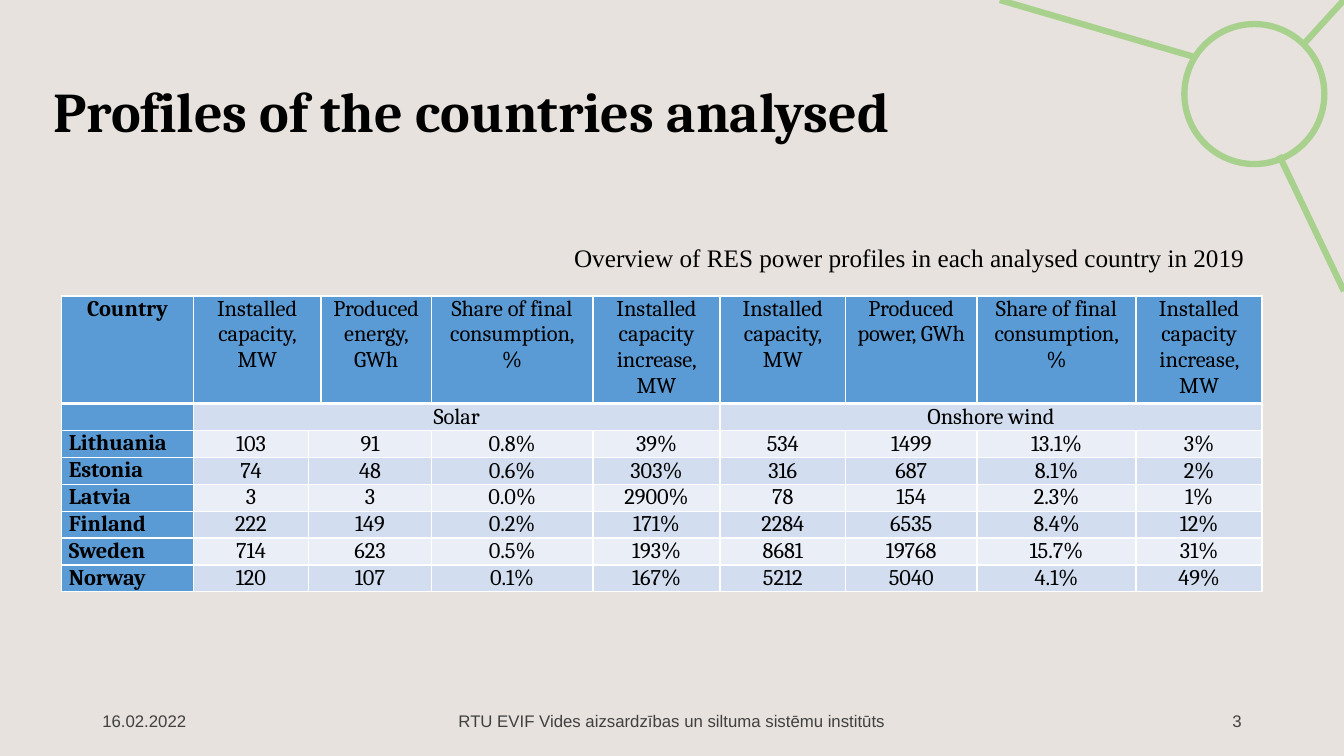
"""Slide with a table of solar and onshore wind power in six countries."""
from lxml.etree import SubElement
from pptx import Presentation
from pptx.dml.color import RGBColor
from pptx.enum.shapes import MSO_CONNECTOR as Link, MSO_SHAPE as Form
from pptx.enum.text import MSO_ANCHOR as Anchor, PP_ALIGN as Align
from pptx.oxml.ns import qn
from pptx.util import Pt

SAND = RGBColor(0xE7, 0xE2, 0xDD)
GREEN = RGBColor(0xA9, 0xD1, 0x8E)
BLACK = RGBColor(0, 0, 0)
GREY = RGBColor(0x40, 0x40, 0x40)
WHITE = RGBColor(0xFF, 0xFF, 0xFF)
BLUE = RGBColor(0x5B, 0x9B, 0xD5)
PALE = RGBColor(0xD2, 0xDE, 0xEF)
LIGHT = RGBColor(0xEA, 0xEF, 0xF7)

deck = Presentation()
deck.slide_width, deck.slide_height = Pt(960), Pt(540)
slide = deck.slides.add_slide(deck.slide_layouts[6])
slide.background.fill.solid()
slide.background.fill.fore_color.rgb = SAND


def add_text(text, box, size, face, color, align=Align.LEFT, anchor=Anchor.MIDDLE):
    frame = slide.shapes.add_textbox(*map(Pt, box)).text_frame
    frame.word_wrap = True
    frame.vertical_anchor = anchor
    para = frame.paragraphs[0]
    para.text = text
    para.alignment = align
    para.font.size, para.font.name = Pt(size), face
    para.font.color.rgb = color
    return para


def add_edge(cell, side, width):
    edge = SubElement(cell._tc.get_or_add_tcPr(), qn("a:ln" + side), w=str(Pt(width)))
    fill = SubElement(edge, qn("a:solidFill"))
    SubElement(fill, qn("a:srgbClr"), val=str(WHITE))


ring = slide.shapes.add_shape(Form.OVAL, Pt(846), Pt(17.2), Pt(100), Pt(100))
ring.shadow.inherit = False
ring.fill.background()
ring.line.color.rgb, ring.line.width = GREEN, Pt(4.5)

for ends in [(960, 208, 913.7, 111), (851.8, 40.3, 714.2, 0), (960, 0, 931, 31.7)]:
    spoke = slide.shapes.add_connector(Link.STRAIGHT, *map(Pt, ends))
    spoke.line.color.rgb, spoke.line.width = GREEN, Pt(4.5)
    SubElement(spoke._element.spPr, qn("a:effectLst"))

title = add_text("Profiles of the countries analysed", (31, 29.5, 744.5, 104.4),
                 40, "Cambria", BLACK)
title.font.bold = True
title.line_spacing = 0.9

CAP = "Installed capacity, MW"
SHARE = "Share of final consumption, %"
RISE = "Installed capacity increase, MW"
rows = [
    ["Country", CAP, "", "Produced energy, GWh", SHARE, RISE,
     CAP, "Produced power, GWh", SHARE, RISE],
    ["", "Solar", "", "", "", "", "Onshore wind", "", "", ""],
    ["Lithuania", "103", "91", "", "0.8%", "39%", "534", "1499", "13.1%", "3%"],
    ["Estonia", "74", "48", "", "0.6%", "303%", "316", "687", "8.1%", "2%"],
    ["Latvia", "3", "3", "", "0.0%", "2900%", "78", "154", "2.3%", "1%"],
    ["Finland", "222", "149", "", "0.2%", "171%", "2284", "6535", "8.4%", "12%"],
    ["Sweden", "714", "623", "", "0.5%", "193%", "8681", "19768", "15.7%", "31%"],
    ["Norway", "120", "107", "", "0.1%", "167%", "5212", "5040", "4.1%", "49%"],
]
widths = [93.8, 82.6, 8.8, 78.7, 115.5, 90.8, 89.7, 93.8, 113.7, 90]
heights = [73.8] + [18.4] * 7

table = slide.shapes.add_table(len(rows), len(widths), Pt(44.2), Pt(211.4),
                               Pt(sum(widths)), Pt(sum(heights))).table
table.first_row = table.horz_banding = False
for col, width in zip(table.columns, widths):
    col.width = Pt(width)
for row, height in zip(table.rows, heights):
    row.height = Pt(height)

for r, row in enumerate(rows):
    for c, text in enumerate(row):
        cell = table.cell(r, c)
        cell.margin_left = cell.margin_right = Pt(5)
        cell.margin_top = cell.margin_bottom = 0
        cell.vertical_anchor = Anchor.MIDDLE if r and c else Anchor.TOP
        for side in "LRTB":
            thick = (r, side) in [(0, "B"), (1, "T")]
            add_edge(cell, side, 3 if thick else 1)
        cell.fill.solid()
        head = r == 0 or c == 0
        cell.fill.fore_color.rgb = BLUE if head else PALE if r % 2 else LIGHT
        para = cell.text_frame.paragraphs[0]
        para.text = text
        para.alignment = Align.LEFT if r and c == 0 else Align.CENTER
        para.font.size, para.font.name = Pt(16), "Cambria"
        para.font.bold = c == 0
        para.font.color.rgb = BLACK

spans = [(0, 1, 2), (1, 1, 5), (1, 6, 9)] + [(r, 2, 3) for r in range(2, len(rows))]
for r, first, last in spans:
    table.cell(r, first).merge(table.cell(r, last))

for text, left, width, align in [
    ("16.02.2022", 66, 216, Align.LEFT),
    ("RTU EVIF Vides aizsardzības un siltuma sistēmu institūts", 318, 324, Align.CENTER),
    ("3", 678, 216, Align.RIGHT),
]:
    add_text(text, (left, 500.5, width, 28.8), 12, "Arial", GREY, align)

add_text("Overview of RES power profiles in each analysed country in 2019",
         (403, 169.4, 499, 29), 18, "Times New Roman", BLACK, anchor=Anchor.TOP)

deck.save("out.pptx")
